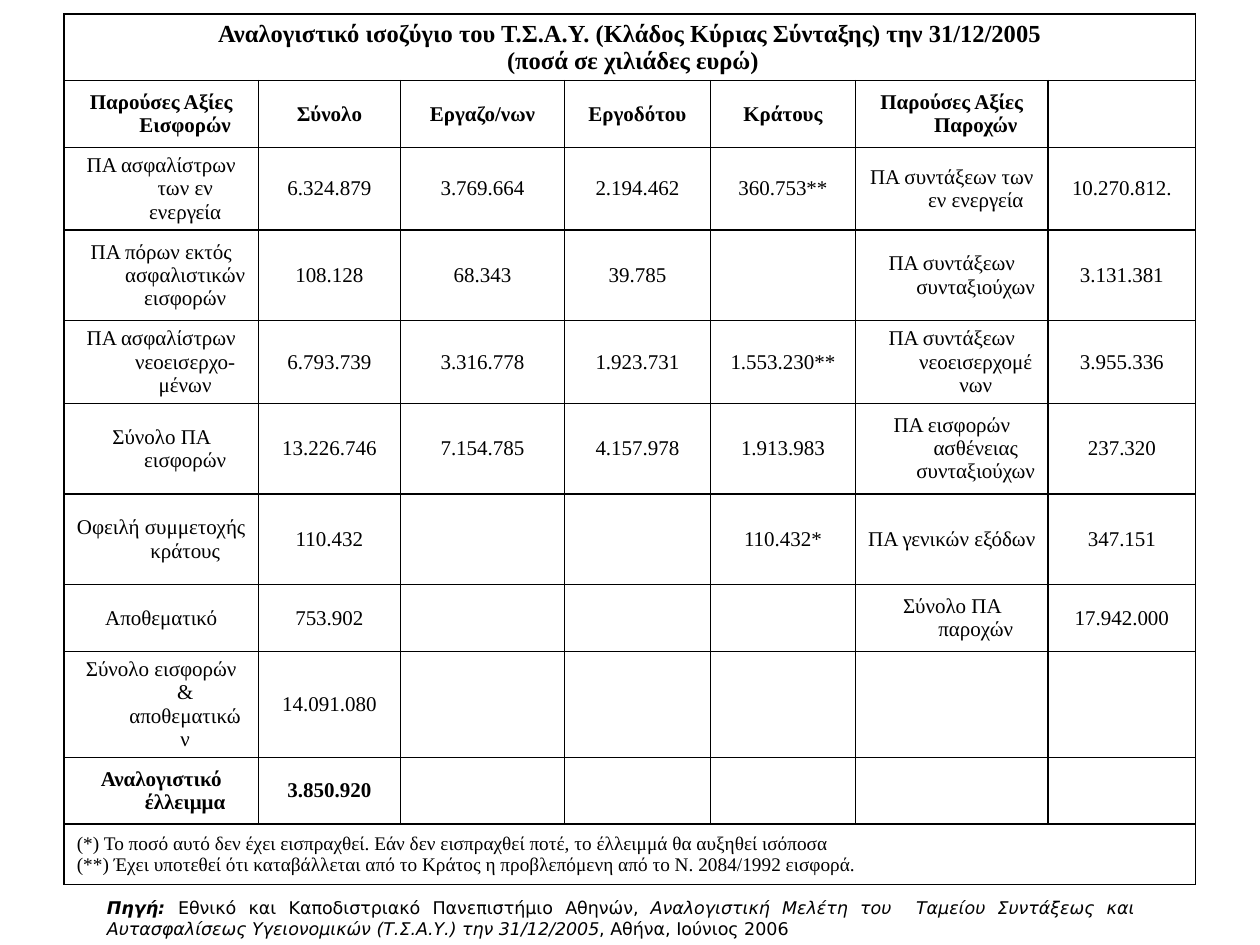
from dataclasses import dataclass

from lxml import etree
from pptx import Presentation
from pptx.dml.color import RGBColor
from pptx.enum.text import MSO_ANCHOR, MSO_AUTO_SIZE, PP_ALIGN
from pptx.oxml.ns import qn
from pptx.util import Inches, Pt

BLACK = RGBColor(0x00, 0x00, 0x00)
SERIF = "Times New Roman"
SANS = "DejaVu Sans"
CENTER = PP_ALIGN.CENTER
JUSTIFY = PP_ALIGN.JUSTIFY
MIDDLE = MSO_ANCHOR.MIDDLE
GROW = MSO_AUTO_SIZE.SHAPE_TO_FIT_TEXT
HANGING = Inches(0.38)
BORDER = Pt(1)

COLUMN_WIDTHS = [1.54, 1.13, 1.3, 1.16, 1.15, 1.53, 1.17]
ROW_HEIGHTS = [0.53, 0.53, 0.53, 0.72, 0.53, 0.72, 0.72, 0.53, 0.55, 0.53, 0.48]

TITLE = ("Αναλογιστικό ισοζύγιο του Τ.Σ.Α.Υ. (Κλάδος Κύριας Σύνταξης) την 31/12/2005\n"
         " (ποσά σε χιλιάδες ευρώ)")
FOOTNOTES = ("(*) Το ποσό αυτό δεν έχει εισπραχθεί. Εάν δεν εισπραχθεί ποτέ, "
             "το έλλειμμά θα αυξηθεί ισόποσα\n"
             "(**) Έχει υποτεθεί ότι καταβάλλεται από το Κράτος η προβλεπόμενη "
             "από το Ν. 2084/1992 εισφορά. ")
BALANCE = [
    ["Παρούσες Αξίες Εισφορών", "Σύνολο", "Εργαζο/νων", "Εργοδότου", "Κράτους",
     "Παρούσες Αξίες Παροχών", ""],
    ["ΠΑ ασφαλίστρων των εν ενεργεία", "6.324.879", "3.769.664", "2.194.462", "360.753**",
     "ΠΑ συντάξεων των εν ενεργεία", "10.270.812."],
    ["ΠΑ πόρων εκτός ασφαλιστικών εισφορών", "108.128", "68.343", "39.785", "",
     "ΠΑ συντάξεων συνταξιούχων", "3.131.381"],
    ["ΠΑ ασφαλίστρων νεοεισερχο-μένων", "6.793.739", "3.316.778", "1.923.731", "1.553.230**",
     "ΠΑ συντάξεων νεοεισερχομένων", "3.955.336"],
    ["Σύνολο ΠΑ εισφορών", "13.226.746", "7.154.785", "4.157.978", "1.913.983",
     "ΠΑ εισφορών ασθένειας συνταξιούχων", "237.320"],
    ["Οφειλή συμμετοχής κράτους", "110.432", "", "", "110.432*",
     "ΠΑ γενικών εξόδων", "347.151"],
    ["Αποθεματικό", "753.902", "", "", "", "Σύνολο ΠΑ παροχών", "17.942.000"],
    ["Σύνολο εισφορών & αποθεματικών", "14.091.080", "", "", "", "", ""],
    ["Αναλογιστικό έλλειμμα", "3.850.920", "", "", "", "", ""],
]


@dataclass
class RowStyle:
    size: int
    bold: bool = False
    align: PP_ALIGN = CENTER


@dataclass
class SourcePart:
    text: str
    bold: bool = False
    italic: bool = False


TITLE_STYLE = RowStyle(14, bold=True)
STRONG_STYLE = RowStyle(12, bold=True)
BODY_STYLE = RowStyle(12)
FOOTNOTE_STYLE = RowStyle(11, align=JUSTIFY)

SOURCE = [
    SourcePart("Πηγή: ", bold=True, italic=True),
    SourcePart("Εθνικό και Καποδιστριακό Πανεπιστήμιο Αθηνών, "),
    SourcePart("Αναλογιστική Μελέτη του  Ταμείου Συντάξεως και Αυτασφαλίσεως "
               "Υγειονομικών (Τ.Σ.Α.Υ.) την 31/12/2005", italic=True),
    SourcePart(", Αθήνα, Ιούνιος 2006"),
]


def format_run(run, face: str, size: int, bold: bool, italic: bool = False) -> None:
    run.font.name = face
    run.font.size = Pt(size)
    run.font.bold = bold
    run.font.italic = italic
    run.font.color.rgb = BLACK


def outline_cell(cell) -> None:
    properties = cell._tc.get_or_add_tcPr()
    for side in ("a:lnL", "a:lnR", "a:lnT", "a:lnB"):
        line = etree.SubElement(properties, qn(side), w=str(BORDER))
        fill = etree.SubElement(line, qn("a:solidFill"))
        etree.SubElement(fill, qn("a:srgbClr"), val=str(BLACK))
    cell.fill.background()


def write_cell(cell, text: str, style: RowStyle) -> None:
    cell.vertical_anchor = MIDDLE
    cell.text_frame.text = text
    for paragraph in cell.text_frame.paragraphs:
        paragraph.alignment = style.align
        indents = paragraph._p.get_or_add_pPr()
        indents.set("marL", str(HANGING))
        indents.set("indent", str(-HANGING))
        for run in paragraph.runs:
            format_run(run, SERIF, style.size, style.bold)


def add_balance_table(slide) -> None:
    table = slide.shapes.add_table(
        len(ROW_HEIGHTS), len(COLUMN_WIDTHS), Inches(0.51), Inches(0.11),
        Inches(sum(COLUMN_WIDTHS)), Inches(sum(ROW_HEIGHTS))).table
    table.first_row = False
    table.horz_banding = False
    for column, width in zip(table.columns, COLUMN_WIDTHS):
        column.width = Inches(width)
    for row, height in zip(table.rows, ROW_HEIGHTS):
        row.height = Inches(height)
    for cell in table.iter_cells():
        outline_cell(cell)

    # Title and footnotes span the full width
    last_row, last_column = len(ROW_HEIGHTS) - 1, len(COLUMN_WIDTHS) - 1
    for row, text, style in ((0, TITLE, TITLE_STYLE), (last_row, FOOTNOTES, FOOTNOTE_STYLE)):
        table.cell(row, 0).merge(table.cell(row, last_column))
        write_cell(table.cell(row, 0), text, style)

    # Headings, amounts and the closing deficit
    for row, values in enumerate(BALANCE, start=1):
        style = STRONG_STYLE if row in (1, len(BALANCE)) else BODY_STYLE
        for column, value in enumerate(values):
            if value:
                write_cell(table.cell(row, column), value, style)


def add_source(slide) -> None:
    frame = slide.shapes.add_textbox(
        Inches(0.75), Inches(7.07), Inches(8.35), Inches(0.43)).text_frame
    frame.word_wrap = True
    frame.auto_size = GROW
    frame.vertical_anchor = MIDDLE
    citation = frame.paragraphs[0]
    citation.alignment = JUSTIFY
    for part in SOURCE:
        run = citation.add_run()
        run.text = part.text
        format_run(run, SANS, 10, part.bold, part.italic)


def main() -> None:
    presentation = Presentation()
    presentation.slide_width = Inches(10)
    presentation.slide_height = Inches(7.5)
    slide = presentation.slides.add_slide(presentation.slide_layouts[6])
    add_balance_table(slide)
    add_source(slide)
    presentation.save("out.pptx")


if __name__ == "__main__":
    main()
